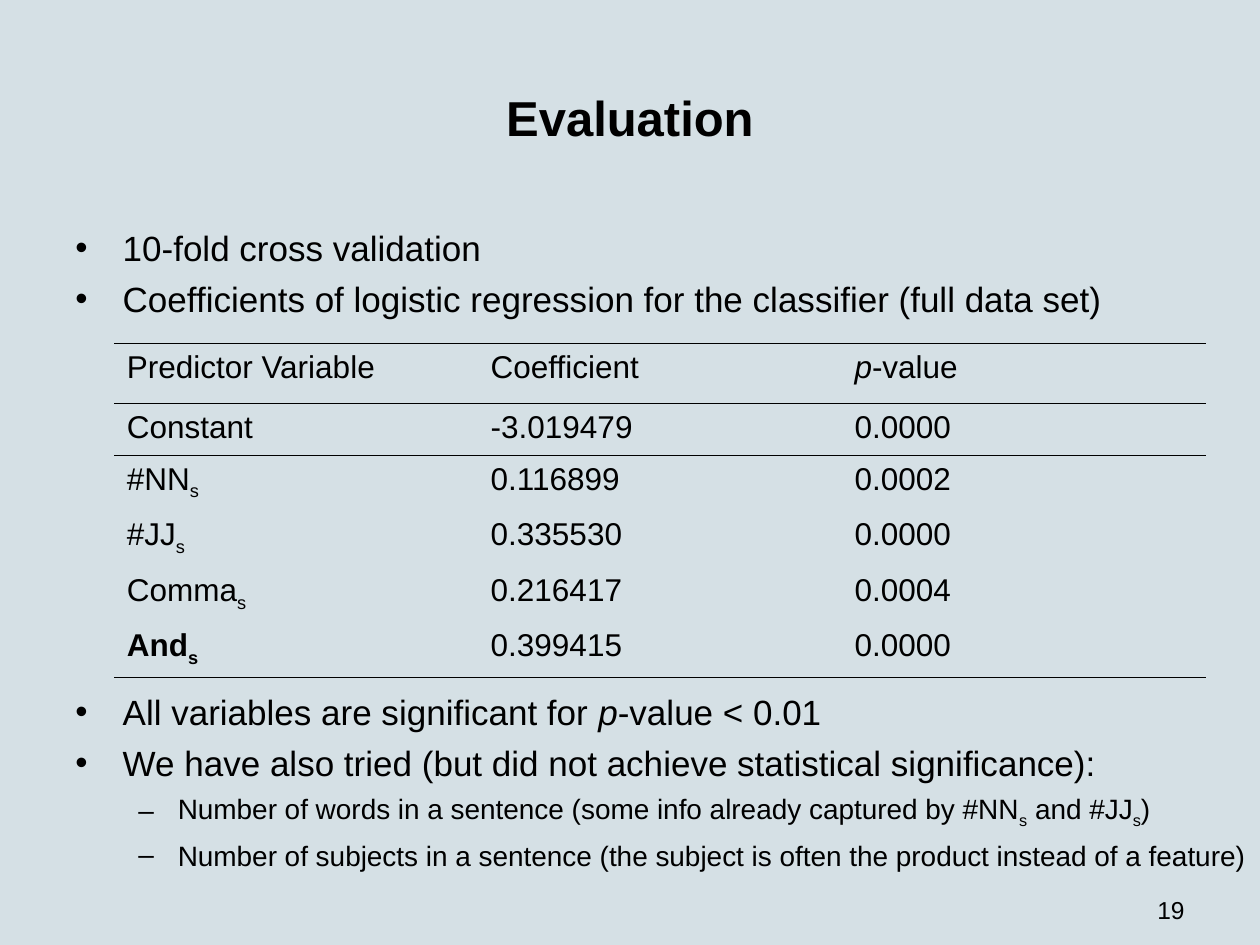
from lxml import etree
from pptx import Presentation
from pptx.dml.color import RGBColor
from pptx.enum.text import MSO_ANCHOR, PP_ALIGN
from pptx.oxml.ns import qn
from pptx.util import Pt

CENTER, RIGHT = PP_ALIGN.CENTER, PP_ALIGN.RIGHT
TOP, MIDDLE = MSO_ANCHOR.TOP, MSO_ANCHOR.MIDDLE
FONT, INK, BACKGROUND = "Arial", "000000", "D5E0E5"

# Content: a text is a list of (words, style) runs; styles are b, i and sub
TITLE = [("Evaluation", "b")]
PAGE_NUMBER = [("19", "")]
SUBSCRIPT = ("s", "sub")
P_VALUE = ("p", "i")

# Bullets: level, space before in points, runs
BULLETS = [
    (0, 2.4, [("10-fold cross validation", "")]),
    (0, 2.4, [("Coefficients of logistic regression for the classifier (full data set)", "")]),
    (0, 210, [("All variables are significant for ", ""), P_VALUE, ("-value < 0.01", "")]),
    (0, 2.4, [("We have also tried (but did not achieve statistical significance):", "")]),
    (1, 2.4, [("Number of words in a sentence (some info already captured by #NN", ""),
              SUBSCRIPT, (" and #JJ", ""), SUBSCRIPT, (")", "")]),
    (1, 2.4, [("Number of subjects in a sentence (the subject is often "
               "the product instead of a feature)", "")]),
]
# Bullet levels: character, text size, left margin, hanging indent
LEVELS = [("•", 20, 27, 27), ("–", 16, 58.5, 22.5)]

TABLE_ROWS = [
    ([("Predictor Variable", "")], [("Coefficient", "")], [P_VALUE, ("-value", "")]),
    ([("Constant", "")], [("-3.019479", "")], [("0.0000", "")]),
    ([("#NN", ""), SUBSCRIPT], [("0.116899", "")], [("0.0002", "")]),
    ([("#JJ", ""), SUBSCRIPT], [("0.335530", "")], [("0.0000", "")]),
    ([("Comma", ""), SUBSCRIPT], [("0.216417", "")], [("0.0004", "")]),
    ([("And", "b"), ("s", "b sub")], [("0.399415", "")], [("0.0000", "")]),
]
ROW_HEIGHTS = [34.2, 29.5] + [30.25] * 4
COLUMN_WIDTH = 207.9
# Horizontal rules: number of rows above the rule -> width
RULES = {0: 0.75, 1: 1, 2: 0.75, 6: 0.75}


def color(hex_text):
    return RGBColor.from_string(hex_text)


def write(paragraph, runs, size):
    for words, style in runs:
        run = paragraph.add_run()
        run.text = words
        font = run.font
        font.name, font.size = FONT, Pt(size)
        font.color.rgb = color(INK)
        font.bold = "b" in style.split()
        font.italic = "i" in style.split()
        if "sub" in style.split():
            run._r.get_or_add_rPr().set("baseline", "-25000")


def add_text_box(slide, left, top, width, height, anchor=TOP):
    frame = slide.shapes.add_textbox(Pt(left), Pt(top), Pt(width), Pt(height)).text_frame
    frame.word_wrap = True
    frame.vertical_anchor = anchor
    return frame


def set_bullet(paragraph, character, margin, hanging):
    properties = paragraph._p.get_or_add_pPr()
    properties.set("marL", str(Pt(margin)))
    properties.set("indent", str(-Pt(hanging)))
    etree.SubElement(properties, qn("a:buFont")).set("typeface", FONT)
    etree.SubElement(properties, qn("a:buChar")).set("char", character)


def set_borders(cell, top, bottom):
    properties = cell._tc.get_or_add_tcPr()
    sides = [("a:lnL", None), ("a:lnR", None), ("a:lnT", top), ("a:lnB", bottom)]
    for position, (tag, width) in enumerate(sides):
        line = etree.Element(qn(tag))
        if width:
            line.set("w", str(Pt(width)))
            fill = etree.SubElement(line, qn("a:solidFill"))
            etree.SubElement(fill, qn("a:srgbClr")).set("val", INK)
        else:
            etree.SubElement(line, qn("a:noFill"))
        properties.insert(position, line)


def main():
    presentation = Presentation()
    presentation.slide_width, presentation.slide_height = Pt(720), Pt(540)
    slide = presentation.slides.add_slide(presentation.slide_layouts[6])
    slide.background.fill.solid()
    slide.background.fill.fore_color.rgb = color(BACKGROUND)

    # Title
    paragraph = add_text_box(slide, 36, 21.6, 648, 90, MIDDLE).paragraphs[0]
    paragraph.alignment = CENTER
    write(paragraph, TITLE, 28)

    # Bullets, with room for the table after the second one
    frame = add_text_box(slide, 36, 126, 692.6, 399)
    for number, (level, space_before, runs) in enumerate(BULLETS):
        paragraph = frame.add_paragraph() if number else frame.paragraphs[0]
        character, size, margin, hanging = LEVELS[level]
        paragraph.level = level
        paragraph.space_before, paragraph.space_after = Pt(space_before), Pt(2.4)
        set_bullet(paragraph, character, margin, hanging)
        write(paragraph, runs, size)

    # Page number
    paragraph = add_text_box(slide, 516, 508, 168, 21.2).paragraphs[0]
    paragraph.alignment = RIGHT
    write(paragraph, PAGE_NUMBER, 14)

    # Table of coefficients
    column_count = len(TABLE_ROWS[0])
    table = slide.shapes.add_table(
        len(TABLE_ROWS), column_count, Pt(65.3), Pt(196.4),
        Pt(COLUMN_WIDTH * column_count), Pt(sum(ROW_HEIGHTS))).table
    table.first_row = table.horz_banding = False
    for column in table.columns:
        column.width = Pt(COLUMN_WIDTH)
    for row_number, texts in enumerate(TABLE_ROWS):
        table.rows[row_number].height = Pt(ROW_HEIGHTS[row_number])
        for column_number, runs in enumerate(texts):
            cell = table.cell(row_number, column_number)
            cell.fill.solid()
            cell.fill.fore_color.rgb = color(BACKGROUND)
            set_borders(cell, RULES.get(row_number), RULES.get(row_number + 1))
            write(cell.text_frame.paragraphs[0], runs, 18)

    presentation.save("out.pptx")


if __name__ == "__main__":
    main()
